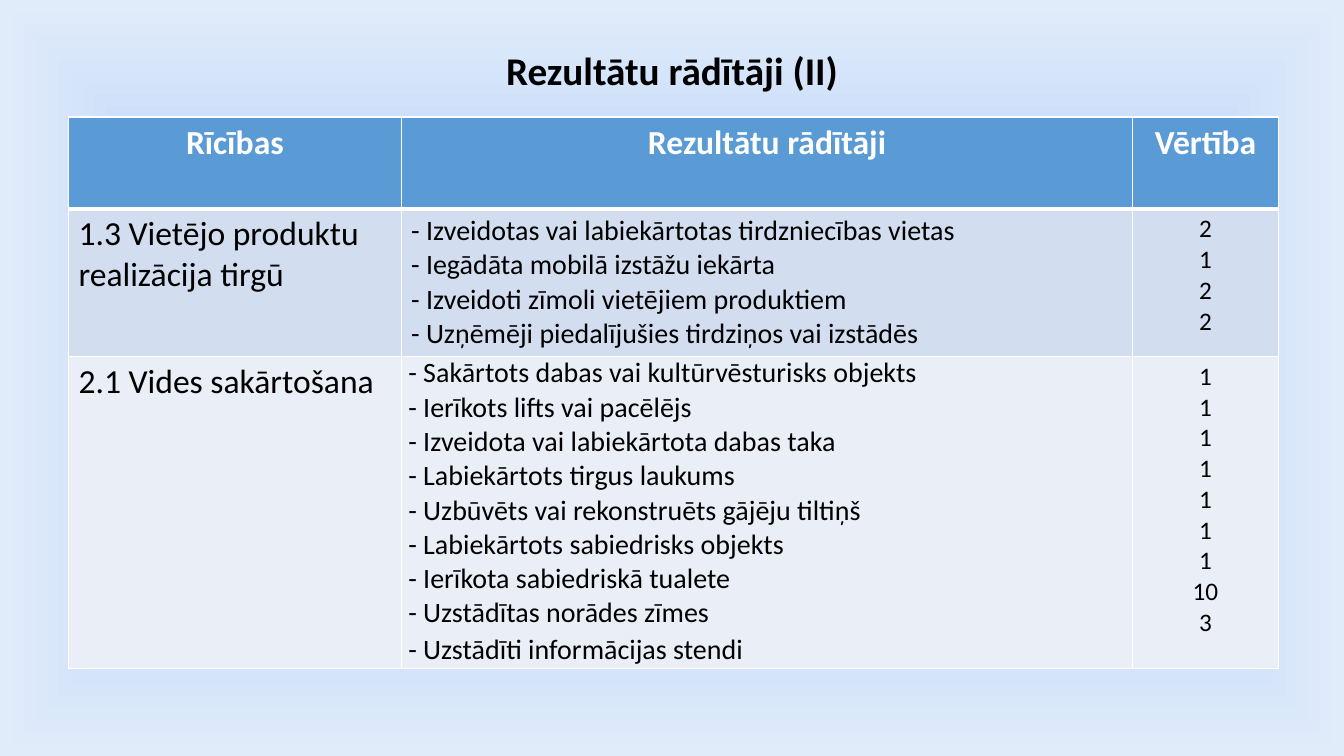
from pptx import Presentation, util as u
from pptx.dml.color import RGBColor
from pptx.enum import text
from pptx.oxml import parse_xml
from pptx.oxml.ns import nsdecls

TITLE = "Rezultātu rādītāji (II)"
HEADS = ["Rīcības", "Rezultātu rādītāji", "Vērtība"]
# Each action: its name, then its indicators with their values
ACTIONS = [
    ("1.3 Vietējo produktu realizācija tirgū", [
        ("Izveidotas vai labiekārtotas tirdzniecības vietas", 2),
        ("Iegādāta mobilā izstāžu iekārta", 1),
        ("Izveidoti zīmoli vietējiem produktiem", 2),
        ("Uzņēmēji piedalījušies tirdziņos vai izstādēs", 2),
    ]),
    ("2.1 Vides sakārtošana", [
        ("Sakārtots dabas vai kultūrvēsturisks objekts", 1),
        ("Ierīkots lifts vai pacēlējs", 1),
        ("Izveidota vai labiekārtota dabas taka", 1),
        ("Labiekārtots tirgus laukums", 1),
        ("Uzbūvēts vai rekonstruēts gājēju tiltiņš", 1),
        ("Labiekārtots sabiedrisks objekts", 1),
        ("Ierīkota sabiedriskā tualete", 1),
        ("Uzstādītas norādes zīmes", 10),
        ("Uzstādīti informācijas stendi", 3),
    ]),
]

THEME = {
    "font": "Calibri", "dark": "000000", "light": "FFFFFF",
    "head": "5B9BD5", "bands": ["D2DEEF", "EAEFF7"],
    "glow": [(0, "FFD966"), (50, "C1D8F8"), (100, "E1ECFB")],
    "title": 28, "label": 24, "item": 20, "value": 18,
    "thin": 1, "thick": 3,
}
COLS = [8.38, 18.44, 3.66]
ROWS = [2.31, 3.7, 7.86]
PAD = (0.25, 0.13)
TIGHT = (0.18, 0)
MID, LEFT = text.PP_ALIGN.CENTER, text.PP_ALIGN.LEFT


def put(obj, **vals):
    for key, val in vals.items():
        setattr(obj, key, val)


def write(frame, lines, size, color, align, bold=False):
    for i, line in enumerate(lines):
        para = frame.paragraphs[0] if i == 0 else frame.add_paragraph()
        para.alignment = align
        run = para.add_run()
        run.text = line
        put(run.font, name=THEME["font"], size=u.Pt(size), bold=bold)
        run.font.color.rgb = RGBColor.from_string(color)


def edge(cell, top, base):
    """Draw the four cell borders; top and base are widths in points."""
    thin = THEME["thin"]
    sides = {"L": thin, "R": thin, "T": top, "B": base}
    props = cell._tc.get_or_add_tcPr()
    for i, (side, width) in enumerate(sides.items()):
        props.insert(i, parse_xml(
            f'<a:ln{side} {nsdecls("a")} w="{u.Pt(width)}"><a:solidFill>'
            f'<a:srgbClr val="{THEME["light"]}"/></a:solidFill></a:ln{side}>'))


def paint(slide):
    """Fill the background with a gradient spreading from the centre."""
    stops = "".join(f'<a:gs pos="{pos * 1000}"><a:srgbClr val="{color}"/></a:gs>'
                    for pos, color in THEME["glow"])
    rect = " ".join(f'{side}="50000"' for side in "ltrb")
    slide.element.cSld.insert(0, parse_xml(
        f'<p:bg {nsdecls("p", "a")}><p:bgPr><a:gradFill rotWithShape="1">'
        f'<a:gsLst>{stops}</a:gsLst><a:path path="shape">'
        f'<a:fillToRect {rect}/></a:path></a:gradFill><a:effectLst/>'
        '</p:bgPr></p:bg>'))


def head(slide):
    title = slide.shapes.title
    put(title, left=u.Cm(2.33), top=u.Cm(0.81),
        width=u.Cm(29.21), height=u.Cm(2.06))
    title.text_frame.vertical_anchor = text.MSO_ANCHOR.MIDDLE
    write(title.text_frame, [TITLE], THEME["title"], THEME["dark"], MID, True)
    title.text_frame.paragraphs[0].line_spacing = 0.9


def grid(slide):
    table = slide.shapes.add_table(
        len(ROWS), len(COLS), u.Cm(1.73), u.Cm(2.95),
        u.Cm(sum(COLS)), u.Cm(sum(ROWS))).table
    for col, width in zip(table.columns, COLS):
        col.width = u.Cm(width)
    for row, height in zip(table.rows, ROWS):
        row.height = u.Cm(height)

    body = [[[name], [f"- {item}" for item, _ in items],
             [str(val) for _, val in items]] for name, items in ACTIONS]
    sizes = [THEME["label"], THEME["item"], THEME["value"]]
    fills = [THEME["head"]] + THEME["bands"]
    for r, line in enumerate([[[name] for name in HEADS]] + body):
        top = THEME["thick" if r == 1 else "thin"]
        base = THEME["thick" if r == 0 else "thin"]
        for c, lines in enumerate(line):
            cell = table.cell(r, c)
            side, rim = TIGHT if (r, c) == (2, 1) else PAD
            put(cell, margin_left=u.Cm(side), margin_right=u.Cm(side),
                margin_top=u.Cm(rim), margin_bottom=u.Cm(rim))
            cell.fill.solid()
            cell.fill.fore_color.rgb = RGBColor.from_string(fills[r])
            edge(cell, top, base)
            if r == 0:
                write(cell.text_frame, lines, THEME["label"],
                      THEME["light"], MID, True)
            else:
                write(cell.text_frame, lines, sizes[c], THEME["dark"],
                      MID if c == 2 else LEFT)
    table.cell(2, 1).text_frame.paragraphs[-1].line_spacing = 1.07


def main():
    deck = Presentation()
    put(deck, slide_width=u.Cm(33.87), slide_height=u.Cm(19.05))
    slide = deck.slides.add_slide(deck.slide_layouts[5])
    paint(slide)
    head(slide)
    grid(slide)
    deck.save("out.pptx")


if __name__ == "__main__":
    main()
